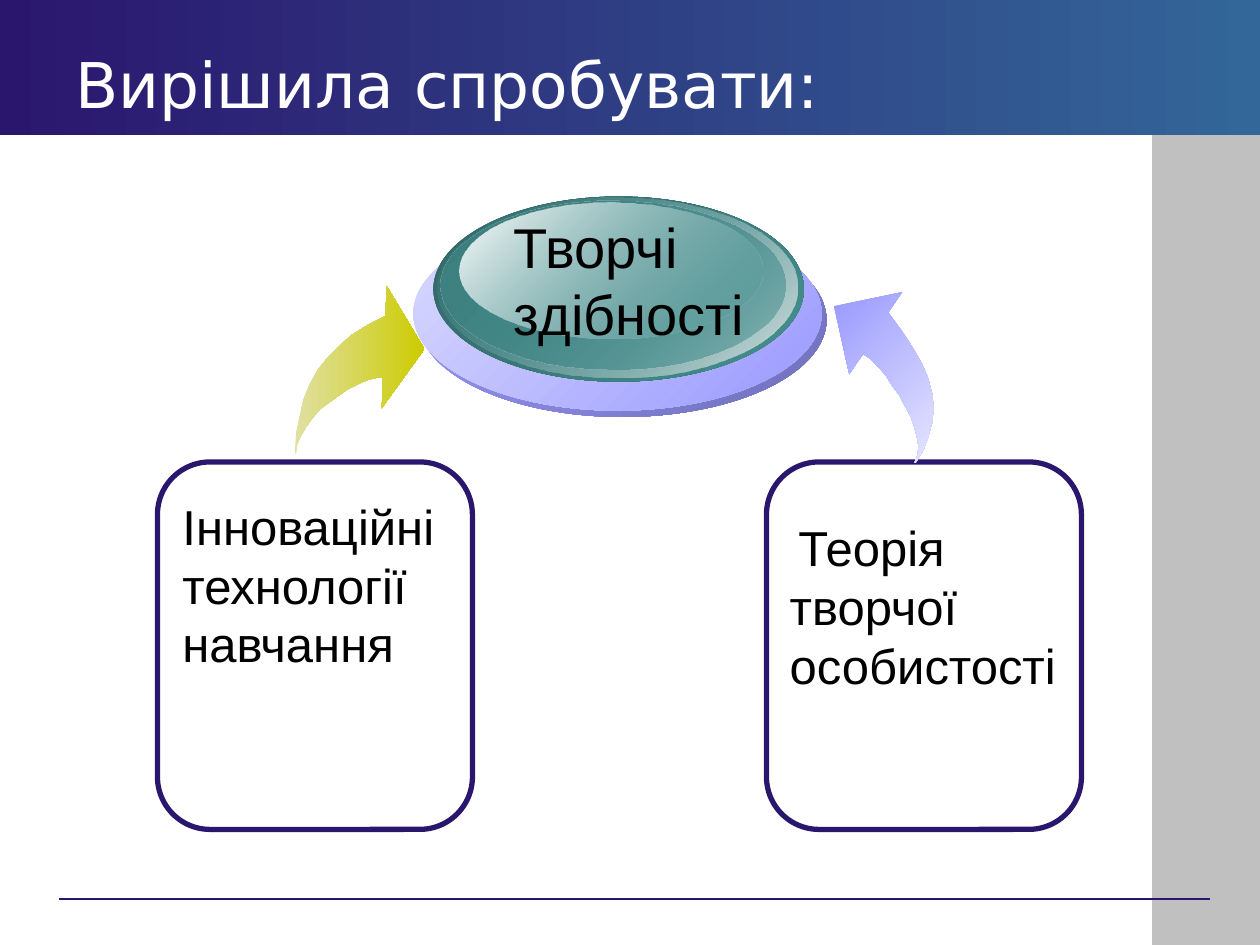
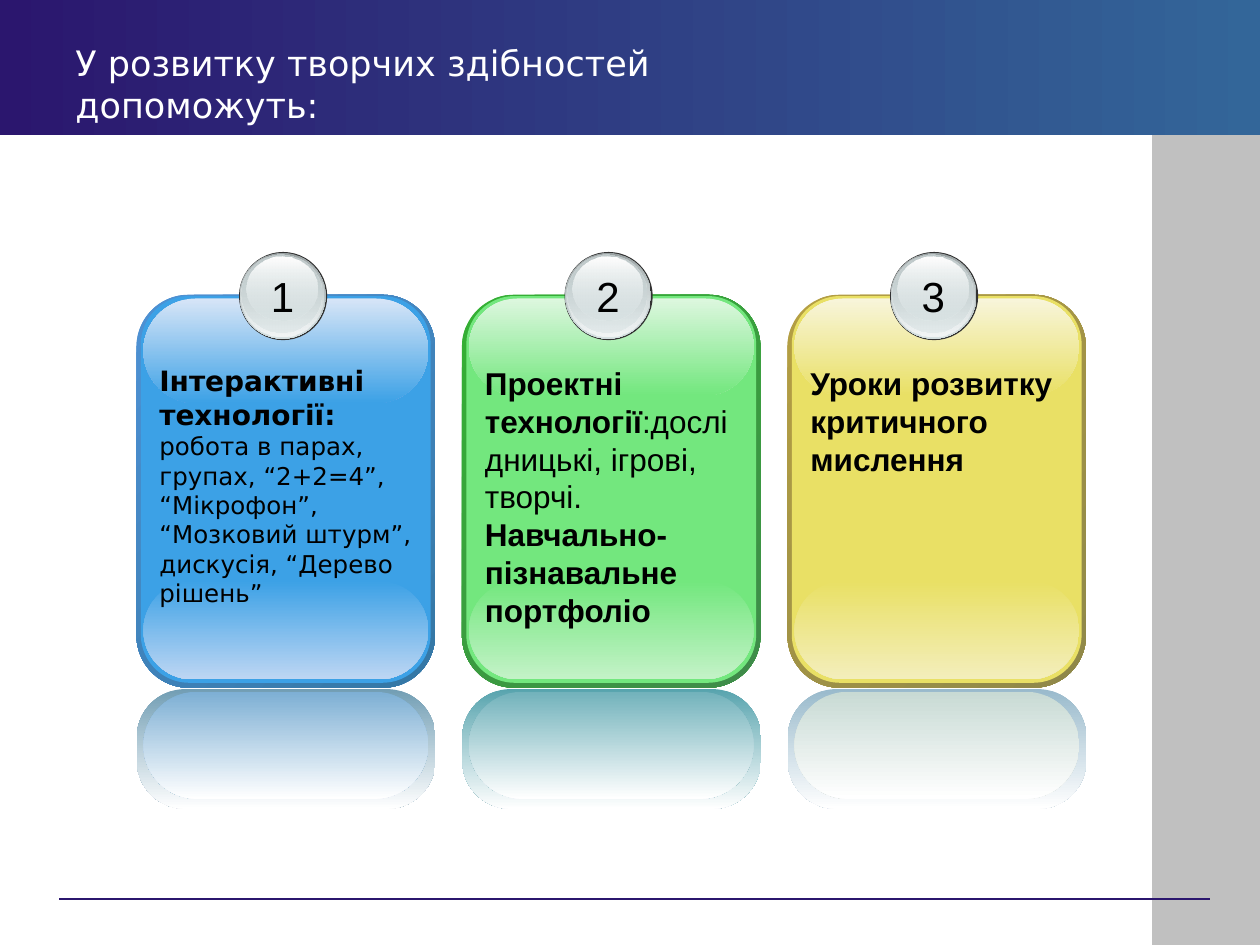
from lxml.etree import SubElement
from pptx import Presentation
from pptx.dml.color import RGBColor
from pptx.enum.shapes import MSO_CONNECTOR, MSO_SHAPE
from pptx.enum.text import MSO_ANCHOR, PP_ALIGN
from pptx.oxml.ns import qn
from pptx.util import Pt

THEME = {
    "navy": "2B166E", "steel": "336699", "side": "C0C0C0",
    "white": "FFFFFF", "black": "000000", "rim": "333333",
    "sans": "Arial", "wide": "DejaVu Sans",
    "title": 36, "long": 20, "core": 32, "box": 28, "digit": 24,
    "card": 18, "head": 16, "small": 14, "rule": 0.75, "edge": 3,
}

SIZE = (720, 540)
TITLES = [("Вирішила спробувати:", "title"),
          ("У розвитку творчих здібностей допоможуть:", "long")]

FRAMES = [438, 90]
LABELS = [
    ((97.2, 280, 160.6, 109), [[("Інноваційні технології навчання", "box")]]),
    ((444.2, 292.2, 185.8, 109),
     [[(" ", "card"), ("Теорія творчої особистості", "box")]]),
    ((286.6, 118, 152, 85), [[("Творчі здібності", "core")]]),
]

DISC = [
    ((239, 127.4, 233.3, 110.9), ("9999FF", "7070BA", 45)),
    ((236.2, 123.8, 233.3, 110.9), ("DADAFF", "9999FF", 45)),
    ((247.7, 112.3, 211.7, 105.8), ("316666", "458F8F", 45)),
    ((249.8, 113, 205.9, 103), ("458F8F", "D6E0E0", 45, 0, 100)),
    ((252, 114.5, 196.6, 96.5), ("3E8181", "458F8F", 45, 100, 48)),
    ((262.8, 115.9, 172.8, 77.8), ("FFFFFF", "458F8F", 45, 100, 38)),
]

ARROWS = [
    (("E0E0A4", "CCCC00", 0), [
        (168.5, 259.2), (169.2, 247.7), (171.4, 237.6), (173.5, 228.2),
        (177.1, 219.6), (181.4, 211.7), (187.2, 204.5), (193.7, 198),
        (200.9, 191.5), (210.2, 185.8), (220.3, 180.7), (221, 163.4),
        (242.6, 199.4), (218.2, 233.3), (218.9, 216), (214.6, 216),
        (209.5, 217.4), (204.5, 219.6), (198.7, 222.5), (193.7, 226.1),
        (188.6, 229.7), (182.9, 234), (178.6, 239), (175, 244.1),
        (172.1, 249.1), (169.9, 254.2), (169.2, 259.2)]),
    (("9999FF", "E5E5FF", 45), [
        (523.4, 264.2), (527.8, 257), (530.6, 249.1), (532.8, 241.2),
        (533.5, 233.3), (532.8, 225.4), (530.6, 216.7), (527, 208.1),
        (522, 199.4), (515.5, 189.4), (507.6, 178.6), (515.5, 167),
        (476.6, 175), (485.3, 213.8), (493.2, 202.3), (497.5, 205.2),
        (501.8, 209.5), (506.2, 214.6), (509.8, 220.3), (514.1, 226.1),
        (517, 231.8), (520.6, 238.3), (522.7, 244.8), (524.2, 250.6),
        (524.9, 255.6), (524.2, 260.6), (522.7, 264.2)]),
]

CARDS = [
    {"rim": ("4E91D4", "3477A4"), "face": "3CA1E6", "foot": "BDD6F3",
     "top": "D7E5F7", "cap": 59.8, "glow": ("729EB4", "7DAFD4"),
     "text": [[("Інтерактивні технології: ", "head", True, "wide"),
               ("робота в парах, групах, “2+2=4”, “Мікрофон”, "
                "“Мозковий штурм”, дискусія, “Дерево рішень”",
                "small", False, "wide")]]},
    {"rim": ("34B034", "3F8B4A"), "face": "73E77E", "foot": "C3F2C7",
     "top": "DDF7DF", "cap": 55.4, "glow": ("58A4AE", "72B2BB"),
     "text": [[("Проектні технології", "card", True),
               (":дослідницькі, ігрові, творчі.", "card")],
              [("Навчально-пізнавальне портфоліо", "card", True)]]},
    {"rim": ("B59F43", "8F8849"), "face": "E9E065", "foot": "F3EEBB",
     "top": "F8F5DB", "cap": 55.4, "glow": ("99BACC", "C8DAD4"),
     "text": [[("Уроки розвитку критичного мислення", "card", True)]]},
]
START, STEP = 78, 186

BADGE = [
    ((58.6, 144, 50.4, 50.4), THEME["rim"]),
    ((59, 144.5, 49, 49), ("99A1A2", "D6E1E2", 90)),
    ((59.5, 144.9, 47.5, 47.5), ("D6E1E2", "F2F5F5", 90, 0, 100)),
    ((60.2, 145.4, 45.4, 44.6), ("C1CBCC", "D6E1E2", 90, 100, 48)),
    ((63, 146.9, 40.3, 36), ("FFFFFF", "D6E1E2", 90, 100, 38)),
]


def rgb(name):
    return RGBColor.from_string(THEME.get(name, name))


def apply(item, values):
    for key, value in values.items():
        setattr(item, key, value)


def blend(shape, first, last, angle, *clear):
    shape.fill.gradient()
    shape.fill.gradient_angle = (360 - angle) % 360
    for stop, tone in zip(shape.fill.gradient_stops, (first, last)):
        stop.color.rgb = rgb(tone)
    tones = shape._element.spPr.iter(qn("a:srgbClr"))
    for node, part in zip(list(tones), clear):
        SubElement(node, qn("a:alpha")).set("val", str(part * 1000))


def paint(shape, fill, edge=None):
    shape.shadow.inherit = False
    if fill is None:
        shape.fill.background()
    elif isinstance(fill, str):
        shape.fill.solid()
        shape.fill.fore_color.rgb = rgb(fill)
    else:
        blend(shape, *fill)
    if edge:
        shape.line.color.rgb = rgb(edge)
        shape.line.width = Pt(THEME["edge"])
    else:
        shape.line.fill.background()


def draw(slide, kind, place, fill, curve=None, edge=None):
    shape = slide.shapes.add_shape(kind, *map(Pt, place))
    if curve is not None:
        shape.adjustments[0] = curve
    paint(shape, fill, edge)


def write(slide, place, paras, tone="black", align=PP_ALIGN.LEFT, **frame):
    body = slide.shapes.add_textbox(*map(Pt, place)).text_frame
    apply(body, {"word_wrap": True, **frame})
    for spot, runs in enumerate(paras):
        para = body.add_paragraph() if spot else body.paragraphs[0]
        para.alignment = align
        for text, size, *rest in runs:
            bold, face = (rest + [False, "sans"][len(rest):])
            run = para.add_run()
            run.text = text
            apply(run.font, {"size": Pt(THEME[size]), "bold": bold,
                             "name": THEME[face]})
            run.font.color.rgb = rgb(tone)


def base(deck, title, size):
    slide = deck.slides.add_slide(deck.slide_layouts[6])
    draw(slide, MSO_SHAPE.RECTANGLE, (658.3, 77, 61.7, 463), "side")
    rule = slide.shapes.add_connector(
        MSO_CONNECTOR.STRAIGHT, *map(Pt, (33.8, 513.8, 691.2, 513.8)))
    rule.line.color.rgb = rgb("navy")
    rule.line.width = Pt(THEME["rule"])
    SubElement(rule._element.spPr, qn("a:effectLst"))
    draw(slide, MSO_SHAPE.RECTANGLE, (0, 0, 720, 77), ("navy", "steel", 0))
    write(slide, (36, 25.2, 486, 44.6), [[(title, size, False, "wide")]],
          "white", vertical_anchor=MSO_ANCHOR.MIDDLE)
    return slide


def ideas(slide):
    for left in FRAMES:
        draw(slide, MSO_SHAPE.ROUNDED_RECTANGLE, (left, 264, 180, 210),
             None, 0.167, "navy")
    for fill, points in ARROWS:
        spots = [(Pt(x), Pt(y)) for x, y in points]
        path = slide.shapes.build_freeform(*spots[0])
        path.add_line_segments(spots[1:], close=True)
        paint(path.convert_to_shape(), fill)
    for place, fill in DISC:
        draw(slide, MSO_SHAPE.OVAL, place, fill)
    for place, paras in LABELS:
        write(slide, place, paras)


def cards(slide):
    for spot, card in enumerate(CARDS):
        left = START + spot * STEP
        face, (glow, sheen) = card["face"], card["glow"]
        parts = [
            (0, 168.4, 170.6, 224.6, 0.175, (*card["rim"], 45)),
            (2.5, 169.2, 165.6, 221, 0.167, face),
            (4, 332, 162.7, 56.2, 0.5, (face, card["foot"], 90)),
            (4, 170.6, 162.7, card["cap"], 0.5, (card["top"], face, 90)),
            (0.2, 393.8, 170.6, 68.4, 0.404, (glow, "white", 90)),
            (4, 395.3, 162.7, 61.2, 0.5, (sheen, "white", 90)),
        ]
        for x, y, wide, high, curve, fill in parts:
            draw(slide, MSO_SHAPE.ROUNDED_RECTANGLE,
                 (left + x, y, wide, high), fill, curve)
        for (x, *rest), fill in BADGE:
            draw(slide, MSO_SHAPE.OVAL, (left + x, *rest), fill)
        write(slide, (left + 69.4, 151.2, 28, 36),
              [[(str(spot + 1), "digit")]], align=PP_ALIGN.CENTER,
              word_wrap=False)
        write(slide, (left + 6, 204.5, 162, 160), card["text"])


def main():
    deck = Presentation()
    apply(deck, dict(zip(("slide_width", "slide_height"), map(Pt, SIZE))))
    for fill, (title, size) in zip((ideas, cards), TITLES):
        fill(base(deck, title, size))
    deck.save("out.pptx")


if __name__ == "__main__":
    main()
